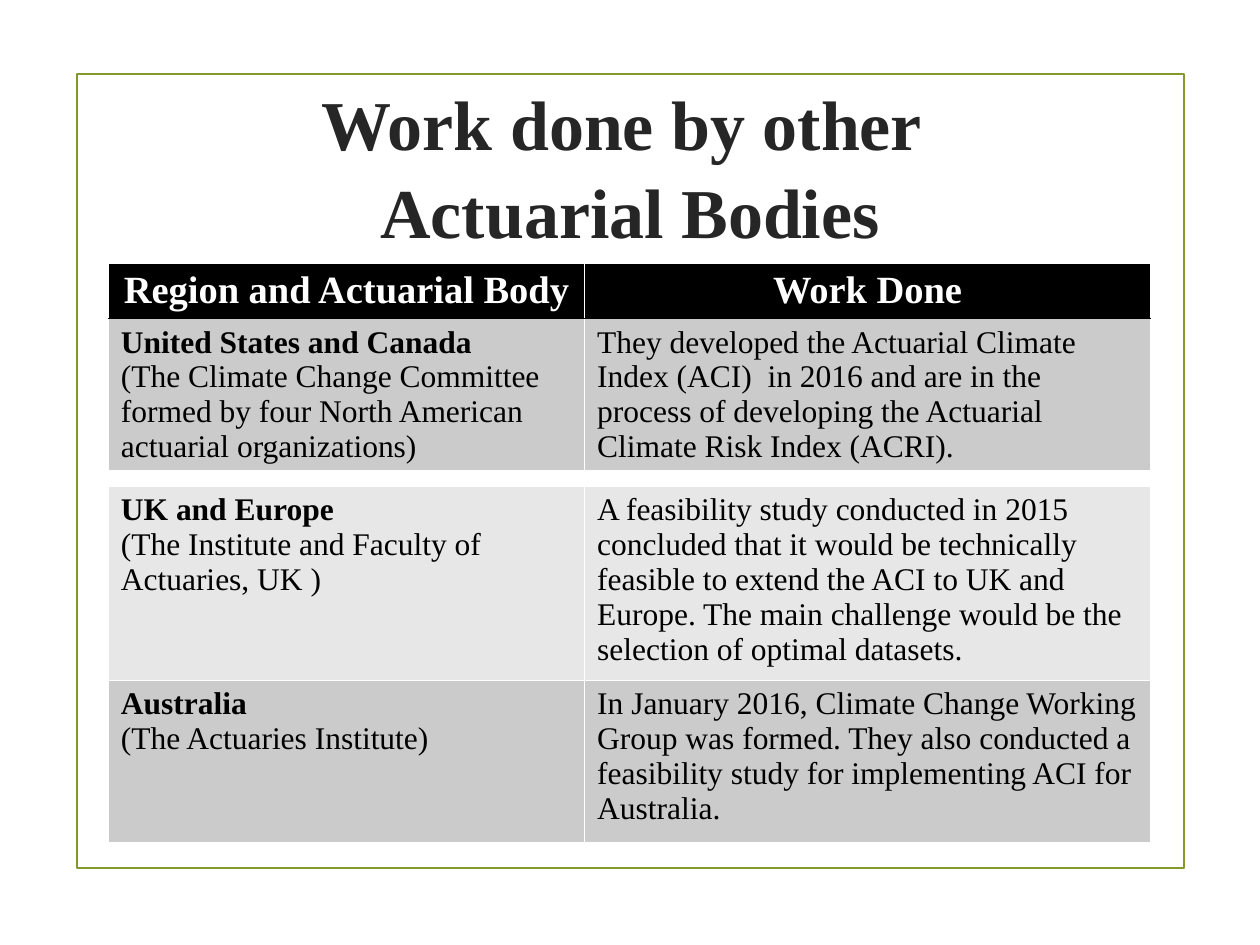
from lxml.etree import SubElement
from pptx import Presentation
from pptx.dml.color import RGBColor
from pptx.enum.shapes import MSO_SHAPE
from pptx.enum.text import MSO_ANCHOR, MSO_AUTO_SIZE, PP_ALIGN
from pptx.oxml.ns import qn
from pptx.util import Inches, Pt

BLACK = RGBColor(0x00, 0x00, 0x00)
WHITE = RGBColor(0xFF, 0xFF, 0xFF)
INK = RGBColor(0x26, 0x26, 0x26)
GREEN = RGBColor(0x83, 0x99, 0x2A)
DARK = RGBColor(0xCB, 0xCB, 0xCB)
LIGHT = RGBColor(0xE7, 0xE7, 0xE7)


def write(frame, lines, size=18, color=BLACK, bold=(False,), align=PP_ALIGN.LEFT, gap=0):
    """Fill a text frame; bold has one flag per line, gap is the space between lines."""
    for i, line in enumerate(lines):
        para = frame.paragraphs[0] if i == 0 else frame.add_paragraph()
        para.alignment = align
        if i:
            para.space_before = Pt(gap)
        run = para.add_run()
        run.text = line
        font = run.font
        font.name = "Times New Roman"
        font.size = Pt(size)
        font.bold = bold[i]
        font.color.rgb = color


def edge(cell, top=WHITE, base=WHITE, thick=1):
    """Draw the four borders of a cell; call before the fill is set."""
    props = cell._tc.get_or_add_tcPr()
    sides = (("L", WHITE, 1), ("R", WHITE, 1), ("T", top, 1), ("B", base, thick))
    for side, color, width in sides:
        line = SubElement(props, qn("a:ln" + side), w=str(Pt(width)))
        fill = SubElement(line, qn("a:solidFill"))
        SubElement(fill, qn("a:srgbClr"), val=str(color))


deck = Presentation()
deck.slide_width, deck.slide_height = Inches(10), Inches(7.5)
slide = deck.slides.add_slide(deck.slide_layouts[5])
shapes = slide.shapes

border = shapes.add_shape(MSO_SHAPE.RECTANGLE, Inches(0.61), Inches(0.59), Inches(8.79), Inches(6.3))
border.shadow.inherit = False
border.fill.background()
border.line.color.rgb = GREEN
border.line.width = Pt(1.25)

title = shapes.title
title.left, title.top = Inches(0.59), Inches(0.81)
title.width, title.height = Inches(8.82), Inches(0.89)
frame = title.text_frame
frame.auto_size = MSO_AUTO_SIZE.NONE
frame.word_wrap = True
frame.vertical_anchor = MSO_ANCHOR.MIDDLE
frame.margin_top = Inches(0.18)
write(frame, ["Work done by other ", "Actuarial Bodies"], size=40, color=INK,
      bold=(True, True), align=PP_ALIGN.CENTER, gap=2)

HEAD = ("Region and Actuarial Body", "Work Done")
# top, row heights, fill, bottom border width, region, body, work done
parts = [
    (2.09, (0.43, 1.21), DARK, 1, "United States and Canada",
     "(The Climate Change Committee formed by four North American actuarial organizations)",
     "They developed the Actuarial Climate Index (ACI)  in 2016 and are in the process "
     "of developing the Actuarial Climate Risk Index (ACRI)."),
    (3.86, (1.6,), LIGHT, 3, "UK and Europe",
     "(The Institute and Faculty of Actuaries, UK )",
     "A feasibility study conducted in 2015 concluded that it would be technically feasible "
     "to extend the ACI to UK and Europe. The main challenge would be the selection of "
     "optimal datasets."),
    (5.4, (1.3,), DARK, 3, "Australia",
     "(The Actuaries Institute)",
     "In January 2016, Climate Change Working Group was formed. They also conducted a "
     "feasibility study for implementing ACI for Australia."),
]

for top, highs, shade, thick, region, body, work in parts:
    table = shapes.add_table(len(highs), 2, Inches(0.86), Inches(top),
                             Inches(8.27), Inches(sum(highs))).table
    headed = len(highs) > 1
    table.first_row = headed
    table.horz_banding = False
    for col, wide in zip(table.columns, (3.78, 4.49)):
        col.width = Inches(wide)
    for row, high in zip(table.rows, highs):
        row.height = Inches(high)
    if headed:
        for cell, text in zip(table.rows[0].cells, HEAD):
            edge(cell, base=BLACK)
            cell.fill.solid()
            cell.fill.fore_color.rgb = BLACK
            write(cell.text_frame, [text], size=22, color=WHITE, bold=(True,),
                  align=PP_ALIGN.CENTER)
    last = table.rows[len(highs) - 1]
    for cell, lines in zip(last.cells, ([region, body], [work])):
        edge(cell, top=BLACK if headed else WHITE, thick=thick)
        cell.fill.solid()
        cell.fill.fore_color.rgb = shade
        write(cell.text_frame, lines, bold=(len(lines) > 1, False))

deck.save("out.pptx")
